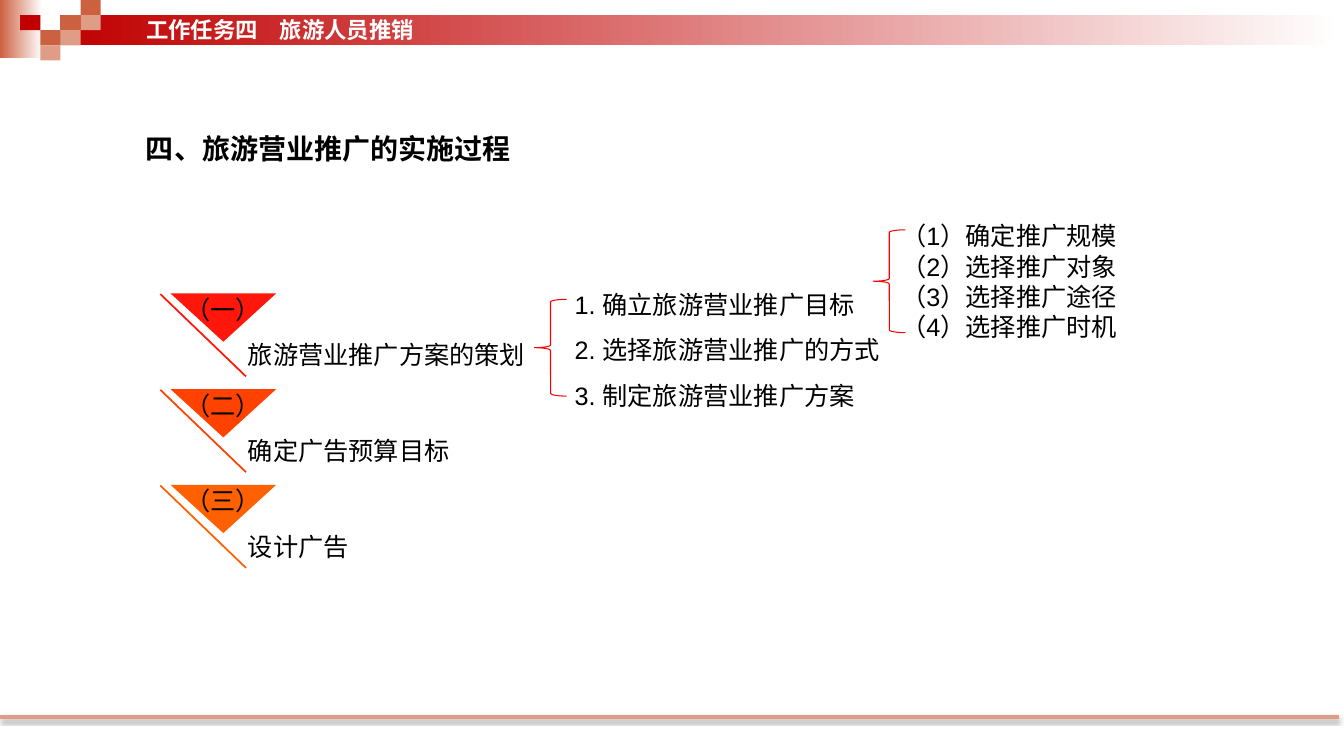
from dataclasses import dataclass

from lxml import etree
from pptx import Presentation
from pptx import util as u
from pptx.dml.color import RGBColor
from pptx.enum import shapes, text
from pptx.oxml.ns import qn


@dataclass(frozen=True)
class Theme:
    latin: str = "Arial"
    east_asian: str = "Noto Sans CJK SC"
    ink: str = "000000"
    white: str = "FFFFFF"
    crimson: str = "C00000"
    clay: str = "CC6140"
    blush: str = "DF9C87"
    brace: str = "FB0000"
    steps: tuple = ("FF170C", "FF4200", "FF6000")
    heading: int = 20
    header: int = 16
    body: int = 18


THEME = Theme()
COLUMN, ROW = 0.2, 0.15  # inches per grid cell


def across(columns):
    return u.Inches(columns * COLUMN)


def down(rows):
    return u.Inches(rows * ROW)


def box(left, top, width, height):
    """Turn grid cells into lengths."""
    return across(left), down(top), across(width), down(height)


def write(shape, lines, size=THEME.body, color=THEME.ink, font=THEME.latin, bold=False,
          align=text.PP_ALIGN.LEFT, spacing=1.0, anchor=text.MSO_ANCHOR.TOP, grow=False):
    frame = shape.text_frame
    frame.word_wrap = True
    frame.vertical_anchor = anchor
    frame.auto_size = text.MSO_AUTO_SIZE.SHAPE_TO_FIT_TEXT if grow else text.MSO_AUTO_SIZE.NONE
    for index, line in enumerate(lines):
        paragraph = frame.add_paragraph() if index else frame.paragraphs[0]
        paragraph.alignment = align
        paragraph.line_spacing = spacing
        run = paragraph.add_run()
        run.text = line
        run.font.name, run.font.size, run.font.bold = font, u.Pt(size), bold
        run.font.color.rgb = RGBColor.from_string(color)
        east_asian = etree.SubElement(run.font._element, qn("a:ea"))
        east_asian.set("typeface", THEME.east_asian)


class SlideBuilder:
    def __init__(self, slide, theme):
        self.slide = slide
        self.theme = theme

    def paint(self, shape, color, fade_to=None):
        """Fill without outline; fade_to makes a left-to-right gradient."""
        shape.shadow.inherit = False
        shape.line.fill.background()
        if fade_to is None:
            shape.fill.solid()
            shape.fill.fore_color.rgb = RGBColor.from_string(color)
            return
        shape.fill.gradient()
        shape.fill.gradient_angle = 0
        for stop, position, tone in zip(shape.fill.gradient_stops, (0, 1), (color, fade_to)):
            stop.position = position
            stop.color.rgb = RGBColor.from_string(tone)

    def rectangle(self, cells, color, fade_to=None):
        shape = self.slide.shapes.add_shape(shapes.MSO_SHAPE.RECTANGLE, *box(*cells))
        self.paint(shape, color, fade_to)

    def brace(self, cells):
        shape = self.slide.shapes.add_shape(shapes.MSO_SHAPE.LEFT_BRACE, *box(*cells))
        shape.shadow.inherit = False
        shape.fill.background()
        shape.line.color.rgb = RGBColor.from_string(self.theme.brace)
        shape.line.width = u.Pt(0.75)

    def line(self, start, end, color, width, shadow=False):
        connector = self.slide.shapes.add_connector(
            shapes.MSO_CONNECTOR.STRAIGHT,
            across(start[0]), down(start[1]), across(end[0]), down(end[1]))
        connector.line.color.rgb = RGBColor.from_string(color)
        connector.line.width = u.Pt(width)
        effects = etree.SubElement(connector._element.spPr, qn("a:effectLst"))
        if shadow:
            outer = etree.SubElement(
                effects, qn("a:outerShdw"), blurRad=str(u.Pt(3.1)), dist=str(u.Pt(1.8)),
                dir="5400000", algn="t", rotWithShape="0")
            black = etree.SubElement(outer, qn("a:srgbClr"), val=self.theme.ink)
            etree.SubElement(black, qn("a:alpha"), val="35000")

    def triangle(self, left, top, width, height, color, label):
        corners = [(left + width, top), (left + width / 2, top + height)]
        builder = self.slide.shapes.build_freeform(across(left), down(top), scale=1.0)
        builder.add_line_segments([(across(x), down(y)) for x, y in corners], close=True)
        shape = builder.convert_to_shape()
        self.paint(shape, color)
        frame = shape.text_frame
        frame.margin_left = frame.margin_right = frame.margin_top = 0
        frame.margin_bottom = u.Inches(0.16)
        write(shape, [label], align=text.PP_ALIGN.CENTER, anchor=text.MSO_ANCHOR.MIDDLE)

    def textbox(self, cells, *lines, **style):
        write(self.slide.shapes.add_textbox(*box(*cells)), lines, **style)

    def step(self, top, color, number, title):
        self.line((7.95, top + 0.05), (12.2, top + 5.5), color, 1.25)
        self.triangle(8.45, top, 5.25, 3.2, color, number)
        self.textbox((11.8, top + 2.55, 33.5, 3), title, anchor=text.MSO_ANCHOR.MIDDLE)


def main():
    presentation = Presentation()
    presentation.slide_width, presentation.slide_height = u.Inches(13.33), u.Inches(7.5)
    theme = THEME
    page = SlideBuilder(presentation.slides.add_slide(presentation.slide_layouts[6]), theme)

    page.rectangle((0, 0, 2.1, 3.87), theme.clay, fade_to=theme.white)
    page.rectangle((3, 1, 63.65, 2), theme.crimson, fade_to=theme.white)
    mosaic = {
        theme.clay: [(3, 1), (4, 0), (2, 2)],
        theme.blush: [(4, 1), (3, 2), (2, 3)],
        theme.crimson: [(1, 1)],
    }
    for color, tiles in mosaic.items():
        for column, row in tiles:
            page.rectangle((column, row, 1, 1), color)
    page.line((0, 47.4), (66.4, 47.4), theme.blush, 3, shadow=True)

    page.textbox((6.75, 7.27, 19.85, 4), "四、旅游营业推广的实施过程", size=theme.heading,
                 font=theme.east_asian, bold=True, spacing=1.5, grow=True)
    page.textbox((6.75, 0.73, 25.55, 2.47), "工作任务四　旅游人员推销", size=theme.header,
                 color=theme.white, bold=True, grow=True)

    steps = [("（一）", "旅游营业推广方案的策划"), ("（二）", "确定广告预算目标"), ("（三）", "设计广告")]
    for index, (color, (number, title)) in enumerate(zip(theme.steps, steps)):
        page.step(19.4 + index * 6.33, color, number, title)

    page.brace((26.5, 19.8, 1.6, 6.4))
    page.textbox((28, 17.8, 33.05, 9.73),
                 "1. 确立旅游营业推广目标", "2. 选择旅游营业推广的方式", "3. 制定旅游营业推广方案",
                 align=text.PP_ALIGN.JUSTIFY, spacing=1.5, grow=True)
    page.brace((43.3, 15.2, 1.6, 6.8))
    page.textbox((44.2, 14.27, 13.9, 8.73),
                 "（1）确定推广规模", "（2）选择推广对象", "（3）选择推广途径", "（4）选择推广时机",
                 grow=True)

    presentation.save("out.pptx")


if __name__ == "__main__":
    main()
